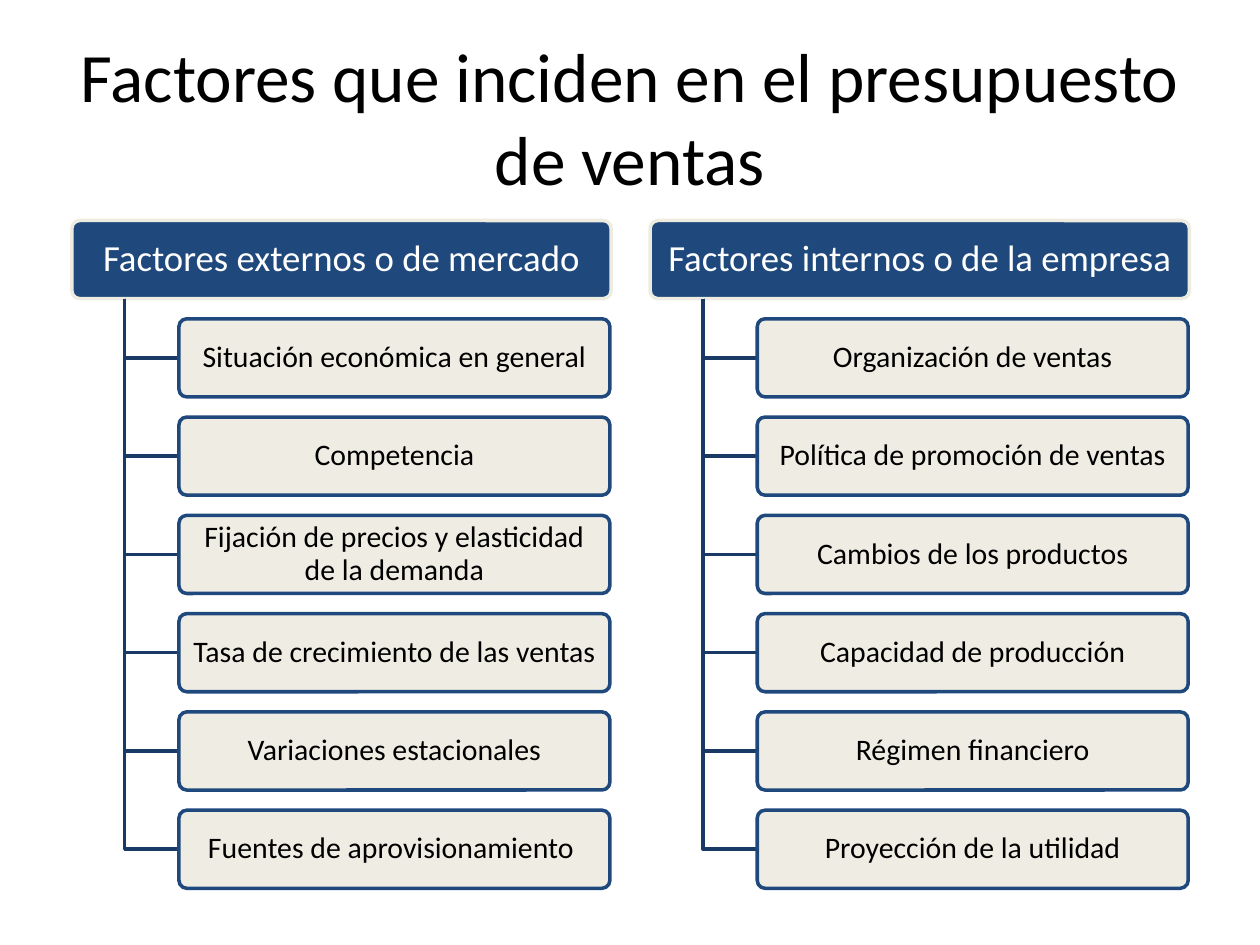
import pptx
import pptx.util
import pptx.dml.color
import pptx.enum.shapes
import pptx.enum.text
import lxml.etree
from pptx.util import Inches

TITLE = "Factores que inciden en el presupuesto de ventas"
COLUMNS = [
    ("Factores externos o de mercado", [
        "Situación económica en general",
        "Competencia",
        "Fijación de precios y elasticidad de la demanda",
        "Tasa de crecimiento de las ventas",
        "Variaciones estacionales",
        "Fuentes de aprovisionamiento ",
    ]),
    ("Factores internos o de la empresa", [
        "Organización de ventas",
        "Política de promoción de ventas",
        "Cambios de los productos",
        "Capacidad de producción",
        "Régimen financiero",
        "Proyección de la utilidad",
    ]),
]
HEADER = {"fill": "1F497D", "line": "EEECE1", "color": "FFFFFF", "size": 21, "inset": 0.03}
FACTOR = {"fill": "EEECE1", "line": "1F497D", "color": "000000", "size": 17, "inset": 0.02,
          "opacity": 90}
BRANCH_COLOR = "193A64"

LEFT, TOP = 0.57, 1.75
COLUMN_PITCH, ROW_PITCH = 4.59, 0.78
HEADER_WIDTH, FACTOR_WIDTH, BOX_HEIGHT = 4.28, 3.42, 0.62
TRUNK_INDENT, FACTOR_INDENT = 0.42, 0.85


def rgb(value):
    return pptx.dml.color.RGBColor.from_string(value)


def assign(target, values):
    for name, value in values.items():
        setattr(target, name, value)


def outline(shape, color):
    shape.shadow.inherit = False
    shape.line.color.rgb = rgb(color)
    shape.line.width = pptx.util.Pt(2)


def write(shape, text, size, color, spacing=1.0, **margins):
    frame = shape.text_frame
    assign(frame, {"word_wrap": True,
                   "vertical_anchor": pptx.enum.text.MSO_ANCHOR.MIDDLE, **margins})
    para = frame.paragraphs[0]
    assign(para, {"alignment": pptx.enum.text.PP_ALIGN.CENTER, "line_spacing": spacing})
    span = para.add_run()
    span.text = text
    assign(span.font, {"name": "Calibri", "size": pptx.util.Pt(size)})
    span.font.color.rgb = rgb(color)


def add_box(page, text, left, top, width, style):
    box = page.shapes.add_shape(
        pptx.enum.shapes.MSO_SHAPE.ROUNDED_RECTANGLE,
        Inches(left), Inches(top), Inches(width), Inches(BOX_HEIGHT))
    box.adjustments[0] = 0.1
    box.fill.solid()
    box.fill.fore_color.rgb = rgb(style["fill"])
    if "opacity" in style:
        color = box.fill._xPr.find(".//" + pptx.oxml.ns.qn("a:srgbClr"))
        alpha = lxml.etree.SubElement(color, pptx.oxml.ns.qn("a:alpha"))
        alpha.set("val", str(style["opacity"] * 1000))
    outline(box, style["line"])
    side, edge = Inches(0.04), Inches(style["inset"])
    write(box, text, style["size"], style["color"], 0.9, margin_left=side,
          margin_right=side, margin_top=edge, margin_bottom=edge)


def add_branch(page, trunk, start, end, middle):
    builder = page.shapes.build_freeform(Inches(trunk), Inches(start))
    builder.add_line_segments(
        [(Inches(trunk), Inches(middle)), (Inches(end), Inches(middle))], close=False)
    branch = builder.convert_to_shape()
    branch.fill.background()
    outline(branch, BRANCH_COLOR)


def main():
    deck = pptx.Presentation()
    assign(deck, {"slide_width": Inches(10), "slide_height": Inches(7.5)})
    page = deck.slides.add_slide(deck.slide_layouts[6])
    heading = page.shapes.add_textbox(Inches(0.5), Inches(0.3), Inches(9), Inches(1.25))
    write(heading, TITLE, 39.6, "000000")
    for column, (header, factors) in enumerate(COLUMNS):
        left = LEFT + column * COLUMN_PITCH
        add_box(page, header, left, TOP, HEADER_WIDTH, HEADER)
        for row, factor in enumerate(factors, 1):
            top = TOP + row * ROW_PITCH
            factor_left = left + FACTOR_INDENT
            add_branch(page, left + TRUNK_INDENT, TOP + BOX_HEIGHT,
                       factor_left, top + BOX_HEIGHT / 2)
            add_box(page, factor, factor_left, top, FACTOR_WIDTH, FACTOR)
    deck.save("out.pptx")


if __name__ == "__main__":
    main()
